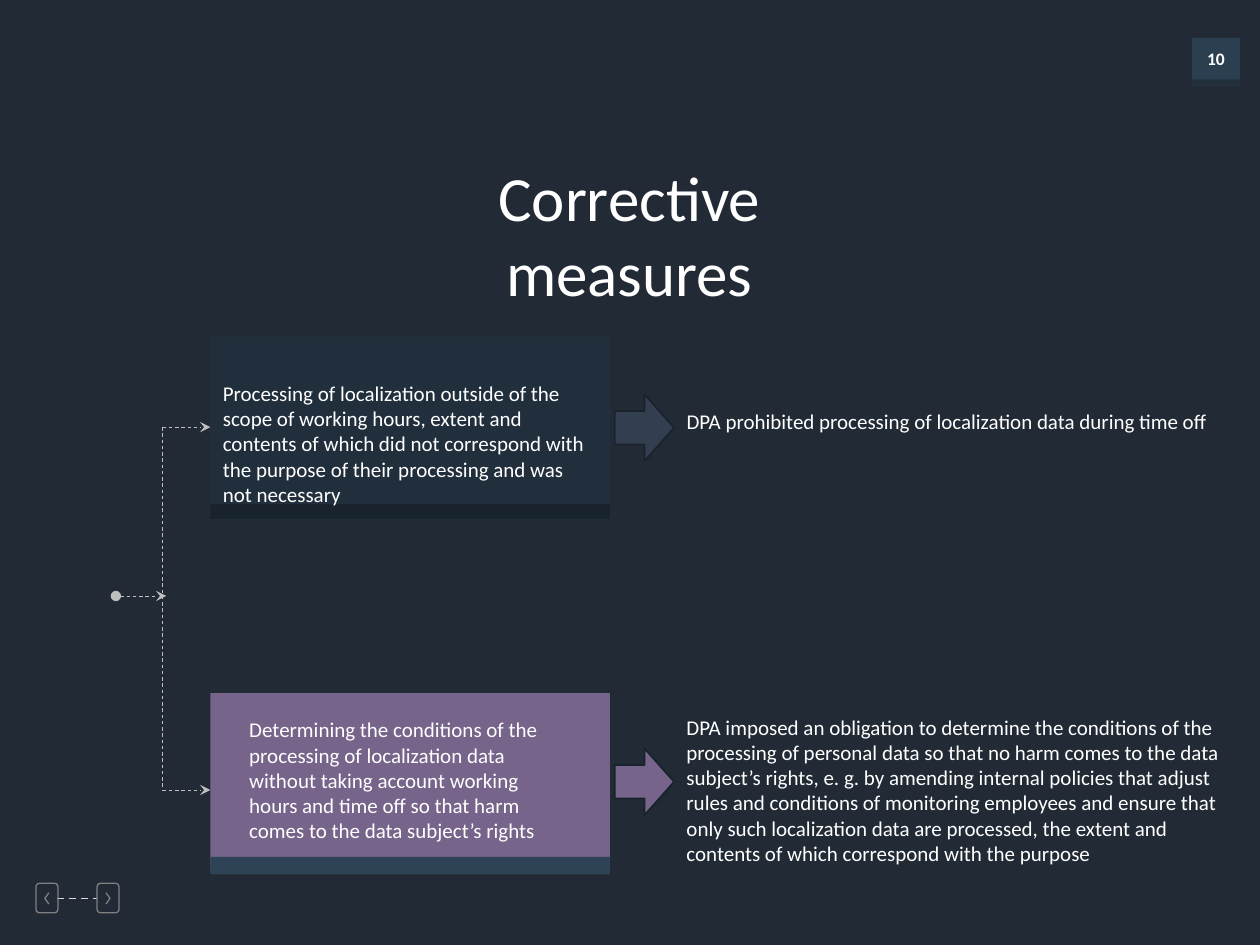
import pptx
import pptx.util
import pptx.dml.color
import pptx.enum.dml
import pptx.enum.shapes
import pptx.enum.text
import pptx.oxml.ns
from lxml import etree

COLORS = {
    "back": "222A35", "white": "FFFFFF", "page": "2C3F50", "navy": "212F3C",
    "night": "19232D", "plum": "76648B", "steel": "2E4356", "slate": "333F50",
    "edge": "18232C", "line": "BFBFBF", "dash": "D9D9D9", "gray": "808080",
}
FONT = "Calibri"
COLS, ROWS = 100, 75

TITLE = ("Corrective measures", (28.2, 15, 43.5, 7.1))
PAGE = ("10", (94.6, 3.3, 3.8, 2.8))
PANELS = [
    ((94.6, 3, 3.8, 3.8), "page"),
    ((94.6, 6.3, 3.8, 0.5), "navy"),
    ((16.7, 26.7, 31.7, 14.6), "navy"),
    ((16.7, 40, 31.7, 1.2), "night"),
    ((16.7, 55, 31.7, 14.1), "plum"),
    ((16.7, 68, 31.7, 1.4), "steel"),
]
NOTES = [
    ("Processing of localization outside of the scope of working hours, extent and "
     "contents of which did not correspond with the purpose of their processing and "
     "was not necessary", (16.7, 29.7, 30.8, 11.1)),
    ("DPA prohibited processing of localization data during time off",
     (53.5, 31.9, 44.1, 3)),
    ("Determining the conditions of the processing of localization data without "
     "taking account working hours and time off so that harm comes to the data "
     "subject’s rights", (18.8, 56.4, 26.7, 11.1)),
    ("DPA imposed an obligation to determine the conditions of the processing of "
     "personal data so that no harm comes to the data subject’s rights, e. g. by "
     "amending internal policies that adjust rules and conditions of monitoring "
     "employees and ensure that only such localization data are processed, the "
     "extent and contents of which correspond with the purpose",
     (53.5, 56.2, 44.6, 13.1)),
]
ARROWS = [((48.8, 31.3, 4.7, 5.3), "slate"), ((48.8, 59.4, 4.7, 5.3), "plum")]
STEM, TOP, LOW = 12.9, 33.9, 62.7
LINKS = [
    ((9.2, 47.3, 13.2, 47.3), "line", 0.5, "oval", "stealth"),
    ((STEM, TOP, STEM, LOW), "line", 0.5, None, None),
    ((STEM, TOP, 16.7, TOP), "line", 0.5, None, "stealth"),
    ((STEM, LOW, 16.7, LOW), "line", 0.5, None, "stealth"),
    ((4.5, 71.3, 7.7, 71.3), "dash", 1, None, None),
]
BUTTONS = [(2.85, -1), (7.7, 1)]

deck = pptx.Presentation()
deck.slide_width = pptx.util.Inches(10)
deck.slide_height = pptx.util.Inches(7.5)
slide = deck.slides.add_slide(deck.slide_layouts[5])
shapes = slide.shapes
KIND = pptx.enum.shapes.MSO_SHAPE
CENTER = pptx.enum.text.PP_ALIGN.CENTER


def place(spots):
    steps = (deck.slide_width / COLS, deck.slide_height / ROWS)
    return [round(spot * steps[i % 2]) for i, spot in enumerate(spots)]


def tint(name):
    return pptx.dml.color.RGBColor.from_string(COLORS[name])


def paint(shape, fill=None, edge=None, width=1):
    shape.shadow.inherit = False
    if fill:
        shape.fill.solid()
        shape.fill.fore_color.rgb = tint(fill)
    else:
        shape.fill.background()
    if edge:
        shape.line.color.rgb = tint(edge)
        shape.line.width = pptx.util.Pt(width)
    else:
        shape.line.fill.background()
    return shape


def write(shape, text, size, wrap=True, bold=False, align=None):
    frame = shape.text_frame
    frame.text = text
    frame.word_wrap = wrap
    para = frame.paragraphs[0]
    para.alignment = align
    font = para.runs[0].font
    font.name, font.size, font.bold = FONT, pptx.util.Pt(size), bold
    font.color.rgb = tint("white")


def link(ends, color, width, head, tail):
    wire = shapes.add_connector(
        pptx.enum.shapes.MSO_CONNECTOR.STRAIGHT, *place(ends))
    wire.line.color.rgb = tint(color)
    wire.line.width = pptx.util.Pt(width)
    wire.line.dash_style = pptx.enum.dml.MSO_LINE.DASH
    qn = pptx.oxml.ns.qn
    props = wire.line._get_or_add_ln()
    for tag, kind in (("a:headEnd", head), ("a:tailEnd", tail)):
        if kind:
            etree.SubElement(props, qn(tag)).set("type", kind)
    etree.SubElement(wire._element.spPr, qn("a:effectLst"))


def button(left, side):
    box = shapes.add_shape(
        KIND.ROUNDED_RECTANGLE, *place((left, 70.1, 1.75, 2.35)))
    paint(box, edge="gray", width=0.75)
    mid = left + 0.87
    dots = [(mid - side * 0.16, 70.85), (mid + side * 0.16, 71.3),
            (mid - side * 0.16, 71.75)]
    first, *rest = [place(dot) for dot in dots]
    pen = shapes.build_freeform(*first, scale=1.0)
    pen.add_line_segments(rest, close=False)
    paint(pen.convert_to_shape(), edge="gray", width=0.75)


slide.background.fill.solid()
slide.background.fill.fore_color.rgb = tint("back")

title = shapes.title
title.left, title.top, title.width, title.height = place(TITLE[1])
write(title, TITLE[0], 36, wrap=False, align=CENTER)

for spot, fill in PANELS:
    paint(shapes.add_shape(KIND.RECTANGLE, *place(spot)), fill)
for item in LINKS:
    link(*item)
for item in BUTTONS:
    button(*item)
for text, spot in NOTES:
    write(shapes.add_textbox(*place(spot)), text, 12)
write(shapes.add_textbox(*place(PAGE[1])), PAGE[0], 10,
      wrap=False, bold=True, align=CENTER)
for spot, fill in ARROWS:
    paint(shapes.add_shape(KIND.RIGHT_ARROW, *place(spot)), fill, "edge")

deck.save("out.pptx")
